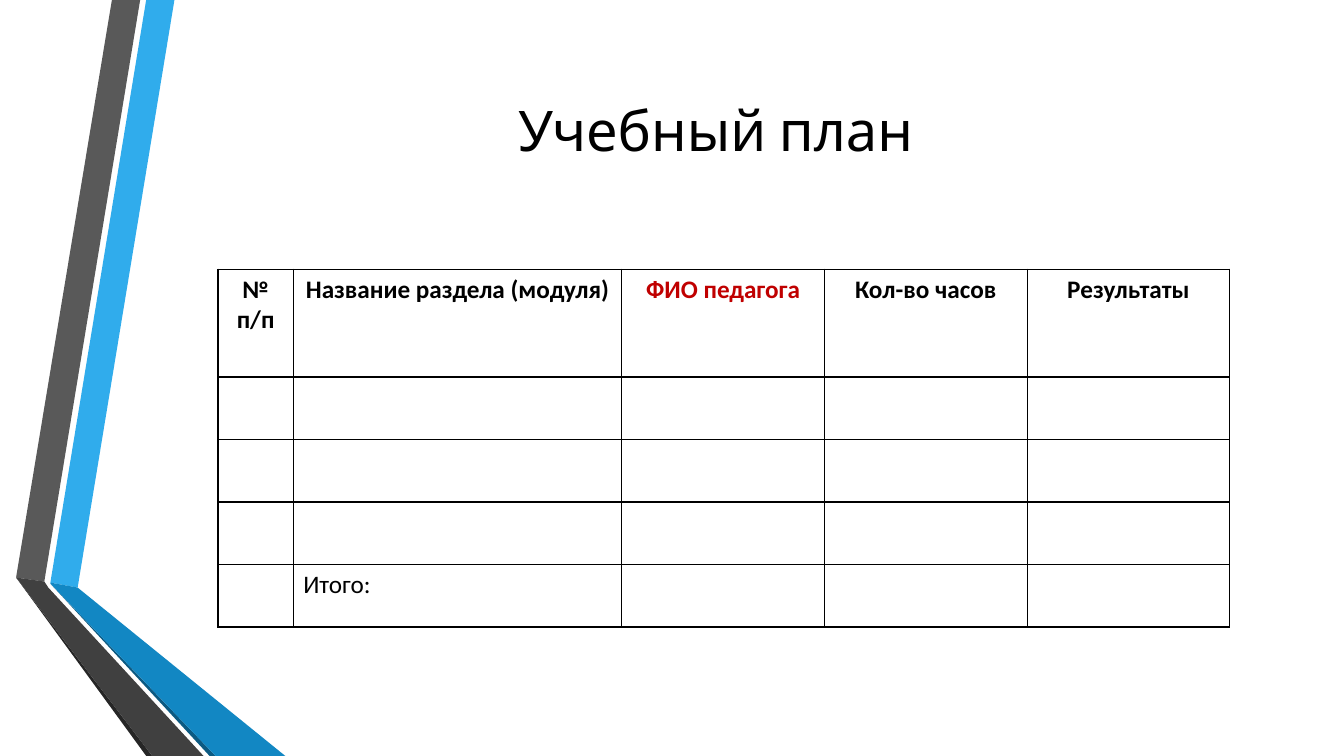
from lxml import etree
from pptx import Presentation, util as u
from pptx.dml.color import RGBColor
from pptx.enum import text
from pptx.oxml.ns import qn

WIDTH, HEIGHT = u.Inches(13.333), u.Inches(7.5)
BLACK = RGBColor(0x00, 0x00, 0x00)
RED = RGBColor(0xC0, 0x00, 0x00)
SKY = RGBColor(0x30, 0xAC, 0xEC)
BLUE = RGBColor(0x12, 0x87, 0xC3)
NAVY = RGBColor(0x0C, 0x5A, 0x82)
GRAY = RGBColor(0x59, 0x59, 0x59)
DARK_GRAY = RGBColor(0x40, 0x40, 0x40)
CHARCOAL = RGBColor(0x26, 0x26, 0x26)

RIBBONS = [
    (SKY, [(3.75, 77.07), (5.78, 77.73), (12.98, 0), (10.88, 0)]),
    (GRAY, [(10.43, 0), (8.33, 0), (1.2, 76.4), (3.3, 76.93)]),
    (CHARCOAL, [(1.2, 76.4), (10.88, 100), (11.33, 100)]),
    (NAVY, [(3.75, 77.2), (15.6, 100), (16.05, 100)]),
    (BLUE, [(3.75, 77.07), (3.75, 77.2), (16.05, 100), (21.23, 100), (5.78, 77.73)]),
    (DARK_GRAY, [(15.15, 100), (3.6, 77.73), (3.3, 76.93), (1.2, 76.4), (11.33, 100)]),
]
HEADERS = ["№ п/п", "Название раздела (модуля)", "ФИО педагога", "Кол-во часов", "Результаты"]
COLUMN_SHARES = [5.6, 24.45] + [15.08] * 3
ROW_SHARES = [14.27] + [8.27] * 4


def across(percent):
    return u.Emu(round(WIDTH * percent / 100))


def down(percent):
    return u.Emu(round(HEIGHT * percent / 100))


def add_ribbon(page, color, corners):
    points = [(across(x), down(y)) for x, y in corners]
    builder = page.shapes.build_freeform(*points[0], scale=1.0)
    builder.add_line_segments(points[1:], close=True)
    ribbon = builder.convert_to_shape()
    ribbon.shadow.inherit = False
    ribbon.fill.solid()
    ribbon.fill.fore_color.rgb = color
    ribbon.line.fill.background()


def write(frame, words, size, name, color=BLACK, bold=False, align=text.PP_ALIGN.CENTER):
    para = frame.paragraphs[0]
    para.text = words
    para.alignment = align
    para.font.size = u.Pt(size)
    para.font.name = name
    para.font.bold = bold
    para.font.color.rgb = color


def add_title(page, words):
    box = page.shapes.add_textbox(across(12.15), down(10), across(82.2), down(14.27))
    box.text_frame.word_wrap = True
    box.text_frame.vertical_anchor = text.MSO_ANCHOR.MIDDLE
    write(box.text_frame, words, 40, "Cabin")


def outline(cell):
    properties = cell._tc.get_or_add_tcPr()
    for side in ("a:lnL", "a:lnR", "a:lnT", "a:lnB"):
        line = etree.SubElement(properties, qn(side), w=str(u.Pt(1)))
        fill = etree.SubElement(line, qn("a:solidFill"))
        etree.SubElement(fill, qn("a:srgbClr"), val=str(BLACK))


def add_plan(page):
    table = page.shapes.add_table(
        len(ROW_SHARES), len(COLUMN_SHARES), across(16.22), down(35.6),
        across(sum(COLUMN_SHARES)), down(sum(ROW_SHARES))).table
    table.first_row = table.horz_banding = False
    for column, share in zip(table.columns, COLUMN_SHARES):
        column.width = across(share)
    for row, share in zip(table.rows, ROW_SHARES):
        row.height = down(share)
    for cell in table.iter_cells():
        outline(cell)
        cell.fill.background()
    for index, header in enumerate(HEADERS):
        color = RED if index == 2 else BLACK
        write(table.cell(0, index).text_frame, header, 18, "Calibri", color, bold=True)
    total = table.cell(len(ROW_SHARES) - 1, 1)
    write(total.text_frame, "Итого:", 18, "Calibri", align=text.PP_ALIGN.LEFT)


def main():
    deck = Presentation()
    deck.slide_width, deck.slide_height = WIDTH, HEIGHT
    page = deck.slides.add_slide(deck.slide_layouts[6])
    for color, corners in RIBBONS:
        add_ribbon(page, color, corners)
    add_title(page, "Учебный план")
    add_plan(page)
    deck.save("out.pptx")


if __name__ == "__main__":
    main()
